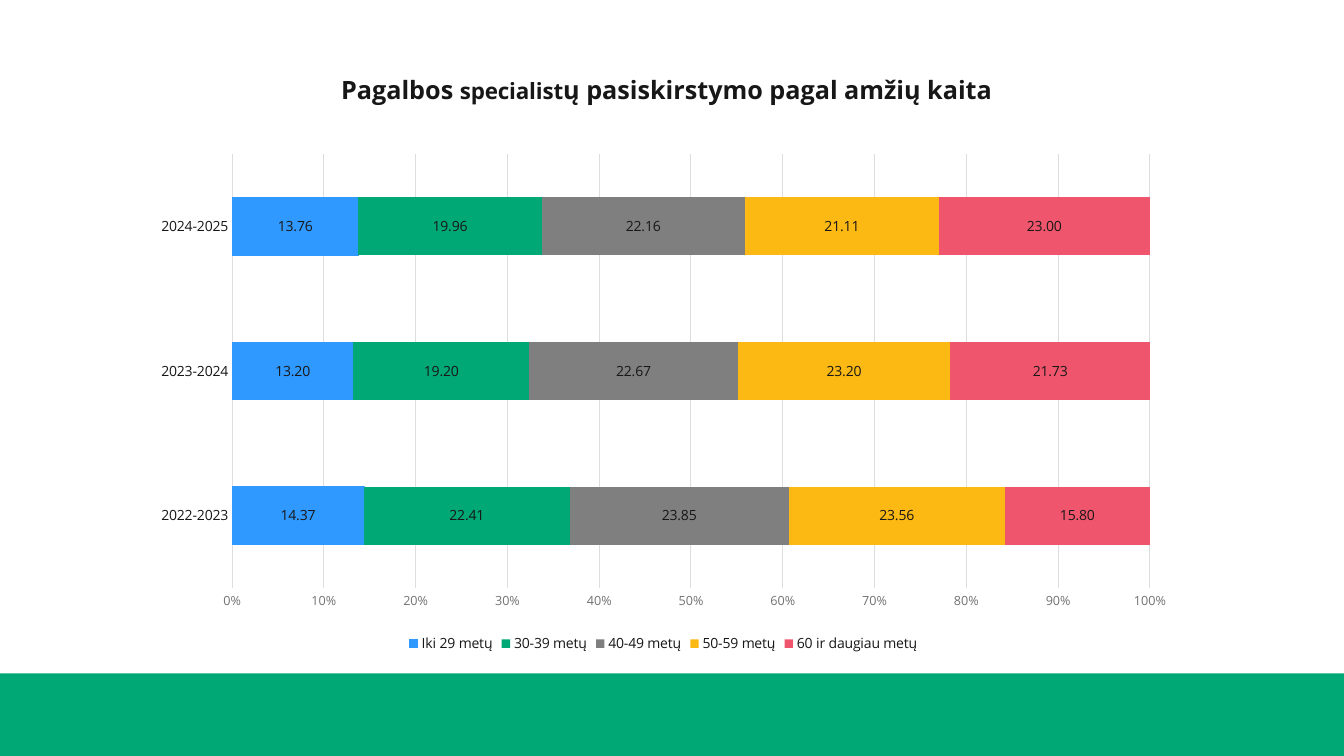
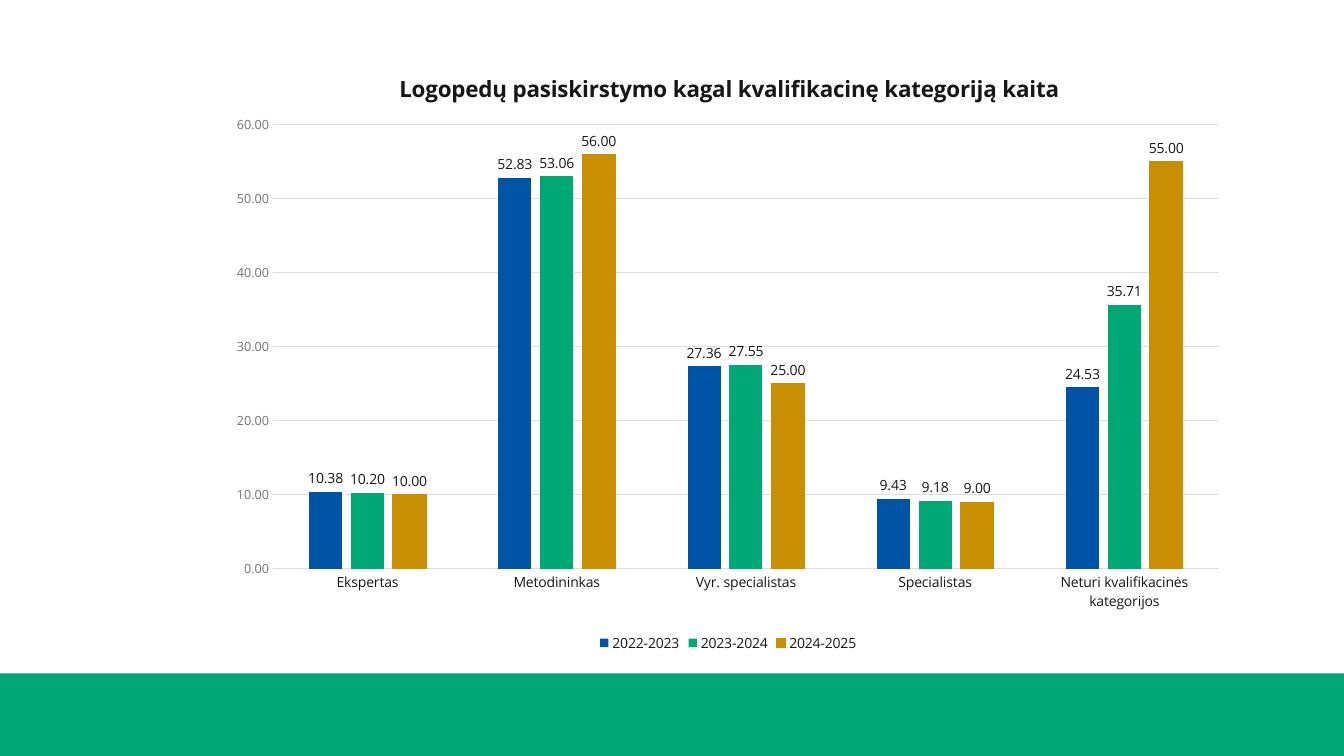
from lxml import etree
from pptx import Presentation
from pptx import util as u
from pptx.chart import data as chart_data
from pptx.dml import color as dml
from pptx.enum import chart as kinds, shapes
from pptx.oxml import ns

# Shared look
COLORS = {
    "ink": "181717", "body": "262626", "muted": "727272", "grid": "DEDEDE",
    "green": "00A875", "sky": "3099FF", "grey": "7F7F7F", "yellow": "FCB813",
    "red": "EF566D", "navy": "0054A5", "ochre": "C98F03",
}
FONT = "Open Sans"
SLIDE_W, SLIDE_H, BAND_H = 33.87, 19.05, 2.08


def rgb(key):
    return dml.RGBColor.from_string(COLORS[key])


def set_all(target, values):
    for name, value in values.items():
        setattr(target, name, value)


def style_font(font, size, color="ink", bold=False):
    set_all(font, {"name": FONT, "size": u.Pt(size), "bold": bold})
    font.color.rgb = rgb(color)


def style_line(line, color):
    line.color.rgb = rgb(color)
    line.width = u.Pt(0.75)


def add_band(slide):
    band = slide.shapes.add_shape(
        shapes.MSO_SHAPE.RECTANGLE, u.Cm(0), u.Cm(SLIDE_H - BAND_H),
        u.Cm(SLIDE_W), u.Cm(BAND_H))
    band.shadow.inherit = False
    band.fill.solid()
    band.fill.fore_color.rgb = rgb("green")
    band.line.fill.background()


def place(parent, index, frame, box, inner=False):
    """Fix a chart part at a slide position in cm, stored as chart fractions."""
    for old in parent.findall(ns.qn("c:layout")):
        parent.remove(old)
    layout = etree.Element(ns.qn("c:layout"))
    manual = etree.SubElement(layout, ns.qn("c:manualLayout"))
    left, top, width, height = frame
    entries = [("layoutTarget", "inner")] if inner else []
    entries += [("xMode", "edge"), ("yMode", "edge")]
    entries += [("x", (box[0] - left) / width), ("y", (box[1] - top) / height)]
    if inner:
        entries += [("w", box[2] / width), ("h", box[3] / height)]
    for tag, value in entries:
        etree.SubElement(manual, ns.qn(f"c:{tag}"), val=str(value))
    parent.insert(index, layout)


def add_title(chart, frame, runs, position):
    chart.has_title = True
    paragraph = chart.chart_title.text_frame.paragraphs[0]
    for words, size in runs:
        run = paragraph.add_run()
        run.text = words
        style_font(run.font, size, bold=True)
    chart.chart_title.include_in_layout = False
    place(chart.chart_title.element, 1, frame, position)


def style_axes(chart, value_format):
    categories, values = chart.category_axis, chart.value_axis
    for axis in (categories, values):
        set_all(axis, {"major_tick_mark": kinds.XL_TICK_MARK.NONE,
                       "minor_tick_mark": kinds.XL_TICK_MARK.NONE})
    categories.has_major_gridlines = False
    style_font(categories.tick_labels.font, 10)
    style_line(categories.format.line, "grid")
    values.has_major_gridlines = True
    style_line(values.major_gridlines.format.line, "grid")
    values.format.line.fill.background()
    style_font(values.tick_labels.font, 9, "muted")
    set_all(values.tick_labels, {"number_format": value_format,
                                 "number_format_is_linked": False})


def style_series(series, color, outlined, label_position):
    series.format.fill.solid()
    series.format.fill.fore_color.rgb = rgb(color)
    if outlined:
        style_line(series.format.line, color)
    labels = series.data_labels
    set_all(labels, {"show_value": True, "number_format": "0.00",
                     "number_format_is_linked": False,
                     "position": label_position})
    style_font(labels.font, 10)


def add_bars(slide, kind, frame, plot_box, categories, rows, spacing,
             label_position, value_format):
    """rows: (series name, colour, outlined, values)."""
    data = chart_data.CategoryChartData(number_format="0.00")
    data.categories = categories
    for name, _, _, values in rows:
        data.add_series(name, values)
    chart = slide.shapes.add_chart(kind, *map(u.Cm, frame), data).chart
    style_font(chart.font, 10, "body")

    plot = chart.plots[0]
    set_all(plot, {"vary_by_categories": False, **spacing})
    for series, (_, color, outlined, _) in zip(plot.series, rows):
        style_series(series, color, outlined, label_position)
    style_axes(chart, value_format)

    chart.has_legend = True
    set_all(chart.legend, {"position": kinds.XL_LEGEND_POSITION.BOTTOM,
                           "include_in_layout": False})
    style_font(chart.legend.font, 10)
    place(chart.element.find(".//" + ns.qn("c:plotArea")), 0, frame, plot_box,
          inner=True)
    return chart


def age_slide(slide):
    frame = (3.53, 1.12, 26.37, 15.44)
    chart = add_bars(
        slide, kinds.XL_CHART_TYPE.BAR_STACKED_100, frame,
        (5.85, 3.88, 23.13, 10.94),
        ["2022-2023", "2023-2024", "2024-2025"],
        [("Iki 29 metų", "sky", True, (14.37, 13.2, 13.76)),
         ("30-39 metų", "green", False, (22.41, 19.2, 19.96)),
         ("40-49 metų", "grey", False, (23.85, 22.67, 22.16)),
         ("50-59 metų", "yellow", False, (23.56, 23.2, 21.11)),
         ("60 ir daugiau metų", "red", False, (15.8, 21.73, 23))],
        {"gap_width": 150, "overlap": 100},
        kinds.XL_LABEL_POSITION.CENTER, "0%")
    add_title(chart, frame,
              [("Pagalbos ", 18), ("specialist", 16),
               ("ų pasiskirstymo pagal amžių kaita", 18)], (8.52, 1.7))


def qualification_slide(slide):
    frame = (5.46, 1.12, 25.78, 15.42)
    chart = add_bars(
        slide, kinds.XL_CHART_TYPE.COLUMN_CLUSTERED, frame,
        (6.88, 3.15, 23.84, 11.18),
        ["Ekspertas", "Metodininkas", "Vyr. specialistas", "Specialistas",
         "Neturi kvalifikacinės kategorijos"],
        [("2022-2023", "navy", False, (10.38, 52.83, 27.36, 9.43, 24.53)),
         ("2023-2024", "green", False, (10.2, 53.06, 27.55, 9.18, 35.71)),
         ("2024-2025", "ochre", True, (10, 56, 25, 9, 55))],
        {"gap_width": 219, "overlap": -27},
        kinds.XL_LABEL_POSITION.OUTSIDE_END, "0.00")
    set_all(chart.value_axis, {"minimum_scale": 0, "maximum_scale": 60,
                               "major_unit": 10})
    add_title(chart, frame,
              [("Logopedų pasiskirstymo kagal kvalifikacinę kategoriją kaita",
                16)], (9.96, 1.7))


def main():
    deck = Presentation()
    set_all(deck, {"slide_width": u.Cm(SLIDE_W), "slide_height": u.Cm(SLIDE_H)})
    for fill_slide in (age_slide, qualification_slide):
        slide = deck.slides.add_slide(deck.slide_layouts[6])
        add_band(slide)
        fill_slide(slide)
    deck.save("out.pptx")


if __name__ == "__main__":
    main()
